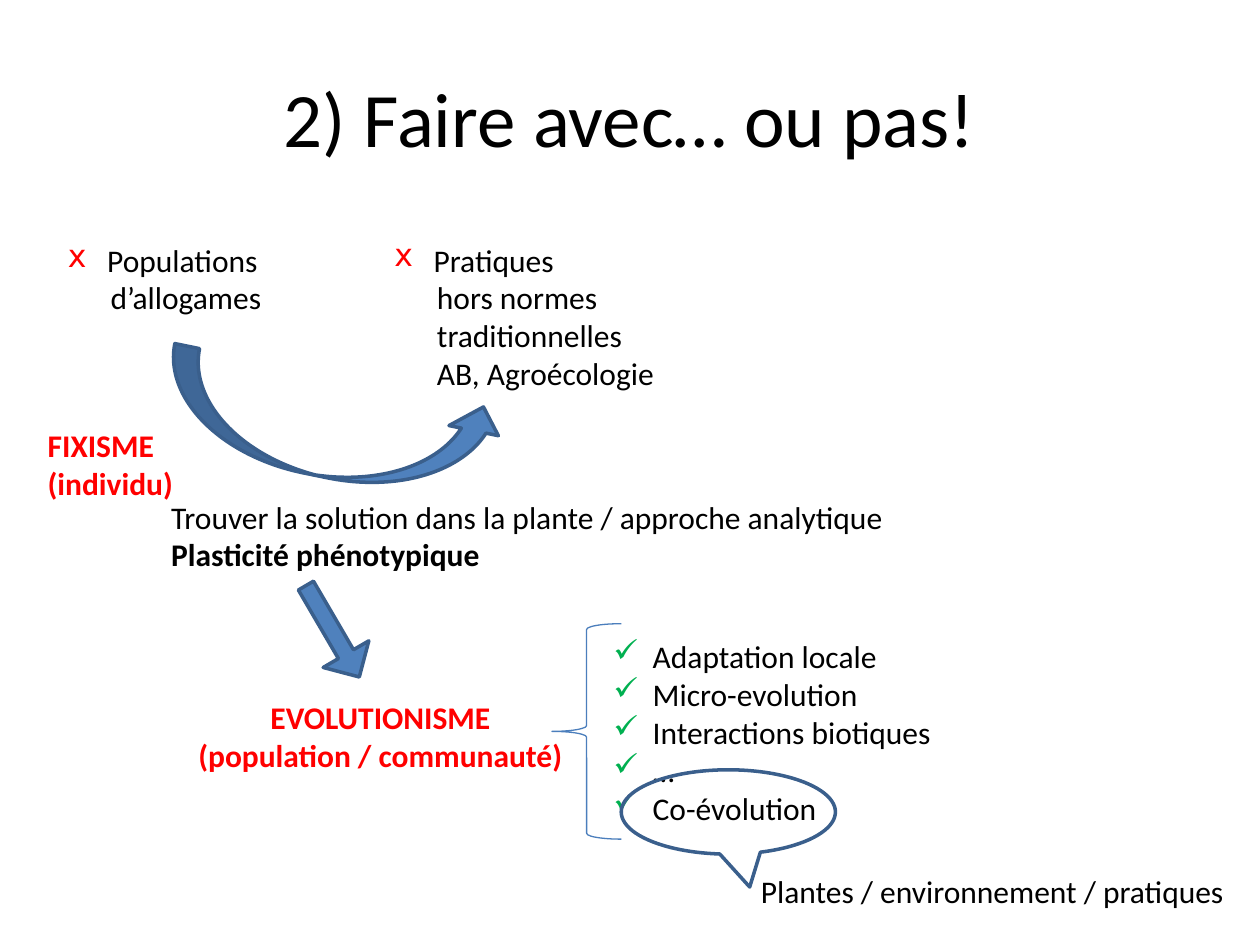
from lxml.etree import SubElement as Sub
from pptx import Presentation
from pptx.dml.color import RGBColor as RGB
from pptx.enum.shapes import MSO_SHAPE as Shape
from pptx.enum.text import MSO_ANCHOR as Anchor, PP_ALIGN as Align
from pptx.oxml.ns import qn
from pptx.util import Pt

HUES = {"ink": "000000", "red": "FF0000", "green": "00B050",
        "blue": "4F81BD", "edge": "3A5F8C", "brace": "4B7EBC"}
HANG = 22.5   # bullet indent
INSET = 24.4  # lines that follow a bulleted one

deck = Presentation()
deck.slide_width, deck.slide_height = Pt(720), Pt(540)
slide = deck.slides.add_slide(deck.slide_layouts[6])


def write(lines, box, size=18, hue="ink", bold=(), align=Align.LEFT,
          anchor=Anchor.TOP, wrap=False, mark=None, mark_hue="red", marked=1):
    """Add a text box; bold holds line numbers, the first `marked` lines get the mark."""
    frame = slide.shapes.add_textbox(*map(Pt, box)).text_frame
    frame.word_wrap, frame.vertical_anchor = wrap, anchor
    for i, line in enumerate(lines):
        para = frame.paragraphs[0] if i == 0 else frame.add_paragraph()
        para.alignment = align
        run = para.add_run()
        run.text = line
        font = run.font
        font.name, font.size, font.bold = "Calibri", Pt(size), i in bold
        font.color.rgb = RGB.from_string(HUES[hue])
        if mark:
            props = para._p.get_or_add_pPr()
            first = i < marked
            props.set("marL", str(Pt(HANG if first else INSET)))
            props.set("indent", str(Pt(-HANG if first else 0)))
            if first:
                tint = Sub(props, qn("a:buClr"))
                Sub(tint, qn("a:srgbClr"), val=HUES[mark_hue])
                Sub(props, qn("a:buChar"), char=mark)


def draw(kind, box, turn=0, fill=None, line="edge", width=2, adjust=()):
    item = slide.shapes.add_shape(kind, *map(Pt, box))
    item.shadow.inherit = False
    item.rotation = turn
    if fill:
        item.fill.solid()
        item.fill.fore_color.rgb = RGB.from_string(HUES[fill])
    else:
        item.fill.background()
    item.line.color.rgb = RGB.from_string(HUES[line])
    item.line.width = Pt(width)
    for i, value in enumerate(adjust):
        item.adjustments[i] = value


write(["2) Faire avec… ou pas!"], (36, 21.6, 648, 90), size=44,
      align=Align.CENTER, anchor=Anchor.MIDDLE, wrap=True)

# From populations to practices
write(["Populations", "d’allogames"], (31.7, 134, 128, 51), mark="x")
write(["Pratiques", "hors normes", "traditionnelles", "AB, Agroécologie"],
      (218.2, 134, 187, 94.5), wrap=True, mark="x")
draw(Shape.CURVED_RIGHT_ARROW, (160.6, 146.9, 57.6, 194.4), turn=281.6, fill="blue")
write(["Trouver la solution dans la plante / approche analytique",
       "Plasticité phénotypique"], (90.7, 280.8, 426, 51), bold=(1,))
write(["FIXISME", "(individu)"], (20.2, 239.8, 86.4, 51), hue="red", bold=(0, 1))

# Evolutionism and its levers
write(["EVOLUTIONISME", "(population / communauté)"], (105.1, 395.3, 224.6, 51),
      hue="red", bold=(0, 1), align=Align.CENTER)
draw(Shape.DOWN_ARROW, (175, 330.5, 30.2, 60.5), turn=329.7, fill="blue",
     adjust=(0.33, 0.5))
draw(Shape.LEFT_BRACE, (315.4, 356.4, 39.6, 123.1), line="brace", width=0.75)
levers = ["Adaptation locale", "Micro-evolution", "Interactions biotiques",
          "…", "Co-évolution"]
write(levers, (343.4, 360.7, 198, 138.2), mark="✓", mark_hue="green",
      marked=len(levers))

# Co-evolution callout
draw(Shape.OVAL_CALLOUT, (355, 439.9, 122.4, 48.2), adjust=(0.1, 0.89))
write(["Plantes / environnement / pratiques"], (427.7, 494.6, 282.2, 28.8))

deck.save("out.pptx")
